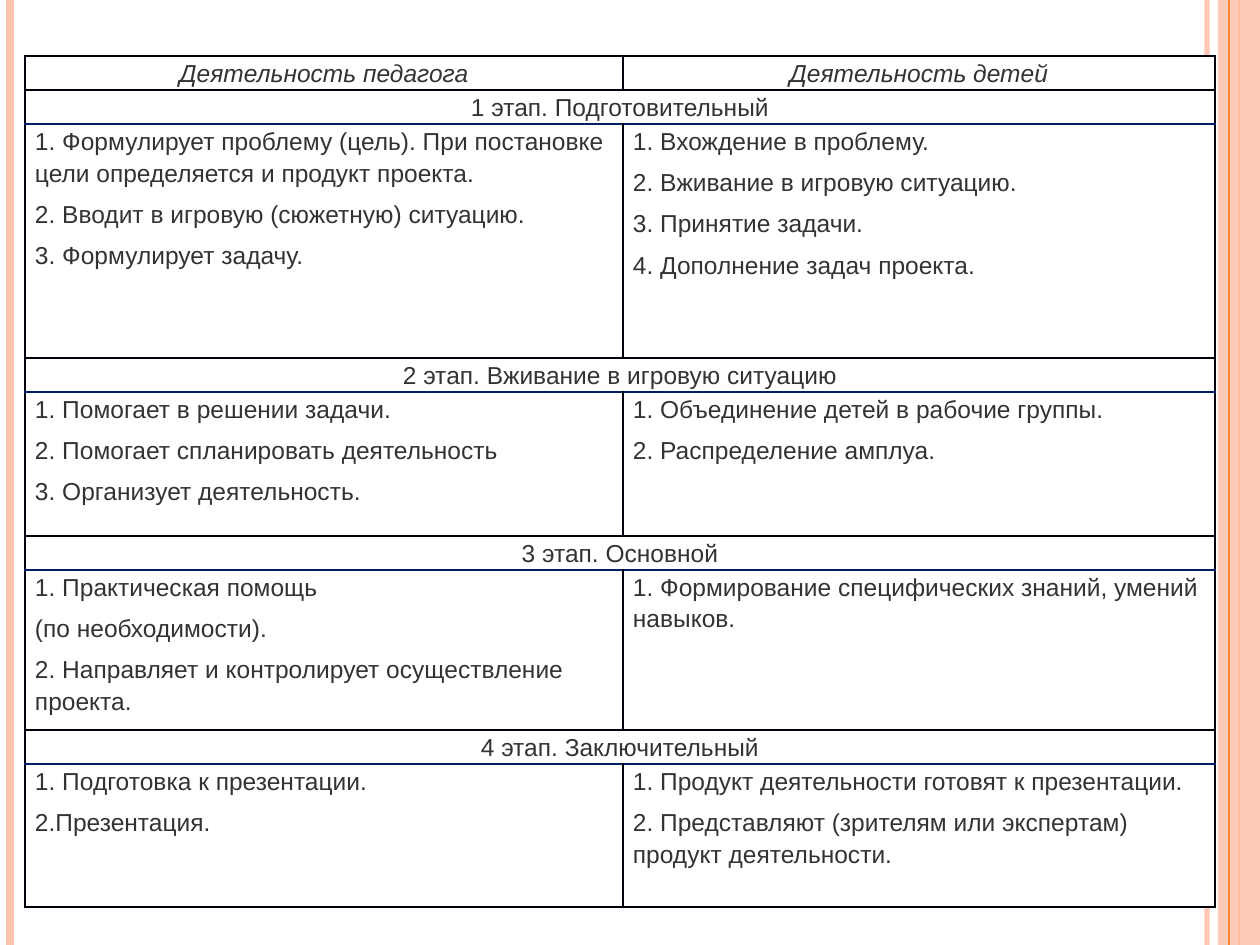
from pptx import Presentation
from pptx.dml.color import RGBColor
from pptx.enum.shapes import MSO_CONNECTOR as Connector, MSO_SHAPE as Shape
from pptx.enum.text import PP_ALIGN as Align
from pptx.oxml.ns import qn
from pptx.util import Pt
from lxml.etree import SubElement

PX = 914400 / 126
WIDTH, HEIGHT = 1260, 945
PEACH, ORANGE, WHITE = "FEC3AE", "FE8637", "FFFFFF"
BLACK, NAVY, GREY = "00000A", "002060", "333333"

# Content
HEADINGS = ["Деятельность педагога", "Деятельность детей"]
STAGES = [
    ("1 этап. Подготовительный", 234,
     ["1. Формулирует проблему (цель). При постановке цели определяется и продукт проекта.",
      "2. Вводит в игровую (сюжетную) ситуацию.",
      "3. Формулирует задачу."],
     ["1. Вхождение в проблему.",
      "2. Вживание в игровую ситуацию.",
      "3. Принятие задачи.",
      "4. Дополнение задач проекта."]),
    ("2 этап. Вживание в игровую ситуацию", 144,
     ["1. Помогает в решении задачи.",
      "2. Помогает спланировать деятельность",
      "3. Организует деятельность."],
     ["1. Объединение детей в рабочие группы.",
      "2. Распределение амплуа."]),
    ("3 этап. Основной", 160,
     ["1. Практическая помощь",
      "(по необходимости).",
      "2. Направляет и контролирует осуществление проекта."],
     ["1. Формирование специфических знаний, умений навыков."]),
    ("4 этап. Заключительный", 143,
     ["1. Подготовка к презентации.",
      "2.Презентация."],
     ["1. Продукт деятельности готовят к презентации.",
      "2. Представляют (зрителям или экспертам) продукт деятельности."]),
]

# Layout: x, colour, points, opacity of each stripe
STRIPES_BEHIND = [(1207, PEACH, 3, 93), (10, PEACH, 4.5, 100), (1239, ORANGE, 1.5, 100)]
STRIPE_FRONT = (1229, ORANGE, 0.75, 100)
BAND = (1218, 0, 42, HEIGHT)
BAND_OPACITY = 87
TABLE_LEFT, TABLE_TOP = 25, 56
COLUMNS = [598, 592]
TITLE_HEIGHT = 34
SIDE_MARGIN = 10

PARAGRAPH = {"line_spacing": 1.15, "space_after": Pt(5.5)}
CELL = {"margin_left": SIDE_MARGIN, "margin_right": SIDE_MARGIN,
        "margin_top": 0, "margin_bottom": 0}


def emu(pixels):
    return round(pixels * PX)


def rgb(value):
    return RGBColor.from_string(value)


def apply(target, values):
    for name, value in values.items():
        setattr(target, name, value)


def set_opacity(shape, percent):
    colour = next(shape._element.spPr.iter(qn("a:srgbClr")))
    SubElement(colour, qn("a:alpha"), val=str(percent * 1000))


def add_stripe(slide, x, colour, points, opacity):
    stripe = slide.shapes.add_connector(
        Connector.STRAIGHT, emu(x), 0, emu(x), emu(HEIGHT))
    stripe.line.color.rgb = rgb(colour)
    stripe.line.width = Pt(points)
    if opacity < 100:
        set_opacity(stripe, opacity)
    SubElement(stripe._element.spPr, qn("a:effectLst"))


def add_borders(cell, top, bottom):
    properties = cell._tc.get_or_add_tcPr()
    for side, colour in (("L", BLACK), ("R", BLACK), ("T", top), ("B", bottom)):
        line = SubElement(properties, qn("a:ln" + side), w=str(Pt(1)))
        fill = SubElement(line, qn("a:solidFill"))
        SubElement(fill, qn("a:srgbClr"), val=colour)
        SubElement(line, qn("a:prstDash"), val="solid")


def fill_cell(cell, lines, align=Align.LEFT, italic=False, top=BLACK, bottom=BLACK):
    apply(cell, {name: emu(value) for name, value in CELL.items()})
    add_borders(cell, top, bottom)
    cell.fill.solid()
    cell.fill.fore_color.rgb = rgb(WHITE)
    frame = cell.text_frame
    for index, text in enumerate(lines):
        paragraph = frame.add_paragraph() if index else frame.paragraphs[0]
        apply(paragraph, {**PARAGRAPH, "alignment": align})
        run = paragraph.add_run()
        run.text = text
        apply(run.font, {"name": "Arial", "size": Pt(14), "bold": False, "italic": italic})
        run.font.color.rgb = rgb(GREY)


def add_stage_table(slide):
    heights = [TITLE_HEIGHT]
    for _, body_height, _, _ in STAGES:
        heights += [TITLE_HEIGHT, body_height]
    table = slide.shapes.add_table(
        len(heights), len(COLUMNS), emu(TABLE_LEFT), emu(TABLE_TOP),
        emu(sum(COLUMNS)), emu(sum(heights))).table
    apply(table, {"first_row": False, "horz_banding": False})
    for column, width in zip(table.columns, COLUMNS):
        column.width = emu(width)
    for row, height in zip(table.rows, heights):
        row.height = emu(height)

    for column, heading in enumerate(HEADINGS):
        fill_cell(table.cell(0, column), [heading], Align.CENTER, italic=True)
    for index, (title, _, *bodies) in enumerate(STAGES):
        row = 1 + 2 * index
        table.cell(row, 0).merge(table.cell(row, 1))
        fill_cell(table.cell(row, 0), [title], Align.CENTER, bottom=NAVY)
        add_borders(table.cell(row, 1), BLACK, NAVY)
        for column, lines in enumerate(bodies):
            fill_cell(table.cell(row + 1, column), lines, top=NAVY)


def main():
    presentation = Presentation()
    apply(presentation, {"slide_width": emu(WIDTH), "slide_height": emu(HEIGHT)})
    slide = presentation.slides.add_slide(presentation.slide_layouts[6])
    slide.background.fill.solid()
    slide.background.fill.fore_color.rgb = rgb(WHITE)

    # Edge stripes and band
    for stripe in STRIPES_BEHIND:
        add_stripe(slide, *stripe)
    band = slide.shapes.add_shape(Shape.RECTANGLE, *map(emu, BAND))
    band.shadow.inherit = False
    band.fill.solid()
    band.fill.fore_color.rgb = rgb(PEACH)
    set_opacity(band, BAND_OPACITY)
    band.line.fill.background()
    add_stripe(slide, *STRIPE_FRONT)

    # Table of project stages
    add_stage_table(slide)
    presentation.save("out.pptx")


if __name__ == "__main__":
    main()
